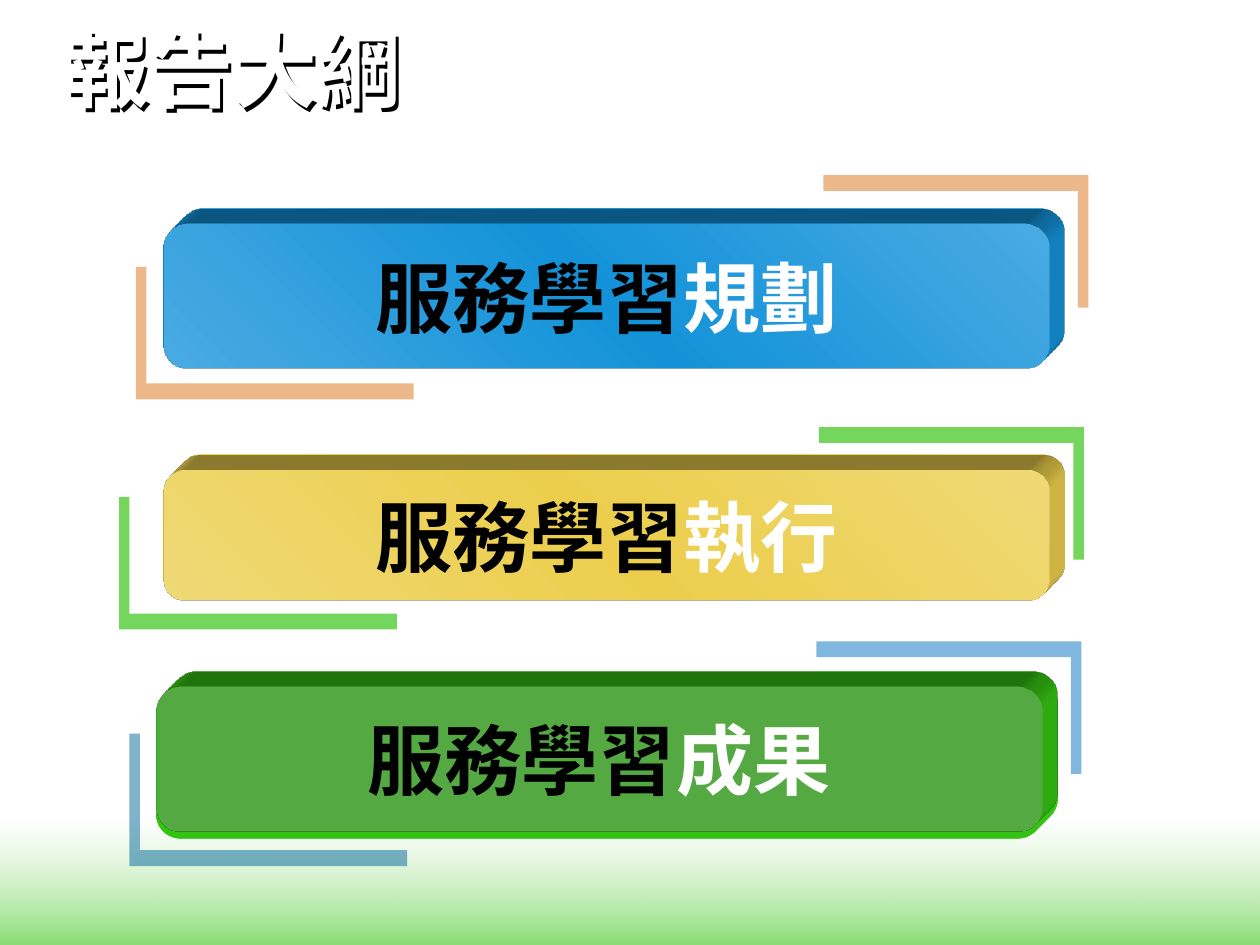
from lxml.etree import SubElement
from pptx import Presentation
from pptx.dml.color import RGBColor
from pptx.enum.shapes import MSO_SHAPE
from pptx.enum.text import MSO_ANCHOR, PP_ALIGN
from pptx.oxml.ns import qn
from pptx.util import Cm, Pt

FONT = "Noto Sans CJK SC"


def paint(fill, *colours, alphas=(), angle=0):
    """Fill with one colour, or with an even gradient at a clockwise angle."""
    if len(colours) == 1:
        fill.solid()
        fill.fore_color.rgb = RGBColor.from_string(colours[0])
        marks = fill._xPr.findall(".//" + qn("a:solidFill") + "/" + qn("a:srgbClr"))[:1]
    else:
        fill.gradient()
        fill.gradient_angle = (360 - angle) % 360
        stops = fill._xPr.find(qn("a:gradFill")).find(qn("a:gsLst"))
        stops.clear()
        marks = []
        for index, colour in enumerate(colours):
            position = 100000 * index // (len(colours) - 1)
            stop = SubElement(stops, qn("a:gs"), pos=str(position))
            marks.append(SubElement(stop, qn("a:srgbClr"), val=colour))
    for mark, alpha in zip(marks, alphas):
        SubElement(mark, qn("a:alpha"), val=str(alpha * 1000))


def write(para, text, size=44, colour="000000"):
    span = para.add_run()
    span.text = text
    span.font.size = Pt(size)
    span.font.bold = True
    paint(span.font.fill, colour)
    for script in ("a:latin", "a:ea"):
        SubElement(span._r.get_or_add_rPr(), qn(script), typeface=FONT)


deck = Presentation()
deck.slide_width, deck.slide_height = Cm(25.4), Cm(19.05)
page = deck.slides.add_slide(deck.slide_layouts[6])

band = page.shapes.add_shape(MSO_SHAPE.RECTANGLE, 0, Cm(16.51), Cm(25.4), Cm(2.54))
band.shadow.inherit = False
band.line.fill.background()
paint(band.fill, "FFFFFF", "35C313", alphas=(30, 59), angle=90)

title = page.shapes.add_textbox(Cm(1.07), Cm(0.64), Cm(19.69), Cm(1.47))
title.text_frame.word_wrap = True
title.text_frame.vertical_anchor = MSO_ANCHOR.MIDDLE
write(title.text_frame.paragraphs[0], "報告大綱", size=48, colour="FFFFFF")
# The box has no fill, so its shadow falls from the letters.
title.fill.background()
title.shadow.inherit = False
cast = SubElement(title._element.spPr.find(qn("a:effectLst")), qn("a:outerShdw"),
                  dist="36000", dir="2700000", algn="ctr", rotWithShape="0")
SubElement(cast, qn("a:srgbClr"), val="000000")

# ending, bar (left, top, height), bar colours, depth colour,
# lower and upper bracket (corner x, corner y, colour), bracket opacity
rows = [
    ("規劃", (3.3, 4.52, 2.92), ("4AABE2", "1392D9", "4AABE2"), "1392D9",
     (2.74, 8.05, "DC7314"), (21.94, 3.53, "DC7314"), 50),
    ("執行", (3.3, 9.47, 2.64), ("EFD975", "ECCE4C", "EFD975"), "ECCE4C",
     (2.4, 12.69, "35C313"), (21.85, 8.61, "35C313"), 68),
    ("成果", (3.15, 13.84, 2.92), ("79EF5D",), "35C313",
     (2.61, 17.46, "006699"), (21.8, 12.93, "0070C0"), 50),
]

for ending, (left, top, height), colours, depth_colour, lower, upper, opacity in rows:
    # The upper bracket is the lower one turned by half a circle.
    for (x, y, colour), turn, length in ((lower, 1, 5.6), (upper, -1, 5.34)):
        outline = [(0, 0), (length, 0), (length, 0.32), (0.21, 0.32), (0.21, 2.67), (0, 2.67)]
        points = [(Cm(x + turn * across), Cm(y - turn * up)) for across, up in outline]
        builder = page.shapes.build_freeform(*points[0])
        builder.add_line_segments(points[1:], close=True)
        bracket = builder.convert_to_shape()
        bracket.shadow.inherit = False
        bracket.line.fill.background()
        paint(bracket.fill, colour, alphas=(opacity,))

    bar = page.shapes.add_shape(
        MSO_SHAPE.ROUNDED_RECTANGLE, Cm(left), Cm(top), Cm(17.86), Cm(height))
    bar.adjustments[0] = 0.167
    bar.shadow.inherit = False
    paint(bar.fill, *colours, angle=315)
    properties = bar._element.spPr
    if len(colours) == 1:
        paint(bar.line.fill, depth_colour)
        bar.line.width = Pt(0.75)
        cast = SubElement(properties.find(qn("a:effectLst")), qn("a:outerShdw"),
                          dist="50800", dir="5400000")
        SubElement(cast, qn("a:srgbClr"), val=depth_colour)
    else:
        bar.line.fill.background()

    scene = SubElement(properties, qn("a:scene3d"))
    SubElement(scene, qn("a:camera"), prst="legacyObliqueTopRight")
    SubElement(scene, qn("a:lightRig"), rig="legacyFlat3", dir="b")
    solid = SubElement(properties, qn("a:sp3d"), extrusionH="316000", prstMaterial="legacyMatte")
    extrusion = SubElement(solid, qn("a:extrusionClr"))
    SubElement(extrusion, qn("a:srgbClr"), val=depth_colour)

    bar.text_frame.word_wrap = False
    bar.text_frame.vertical_anchor = MSO_ANCHOR.MIDDLE
    para = bar.text_frame.paragraphs[0]
    para.alignment = PP_ALIGN.CENTER
    write(para, "服務學習")
    write(para, ending, colour="FFFFFF")

deck.save("out.pptx")
